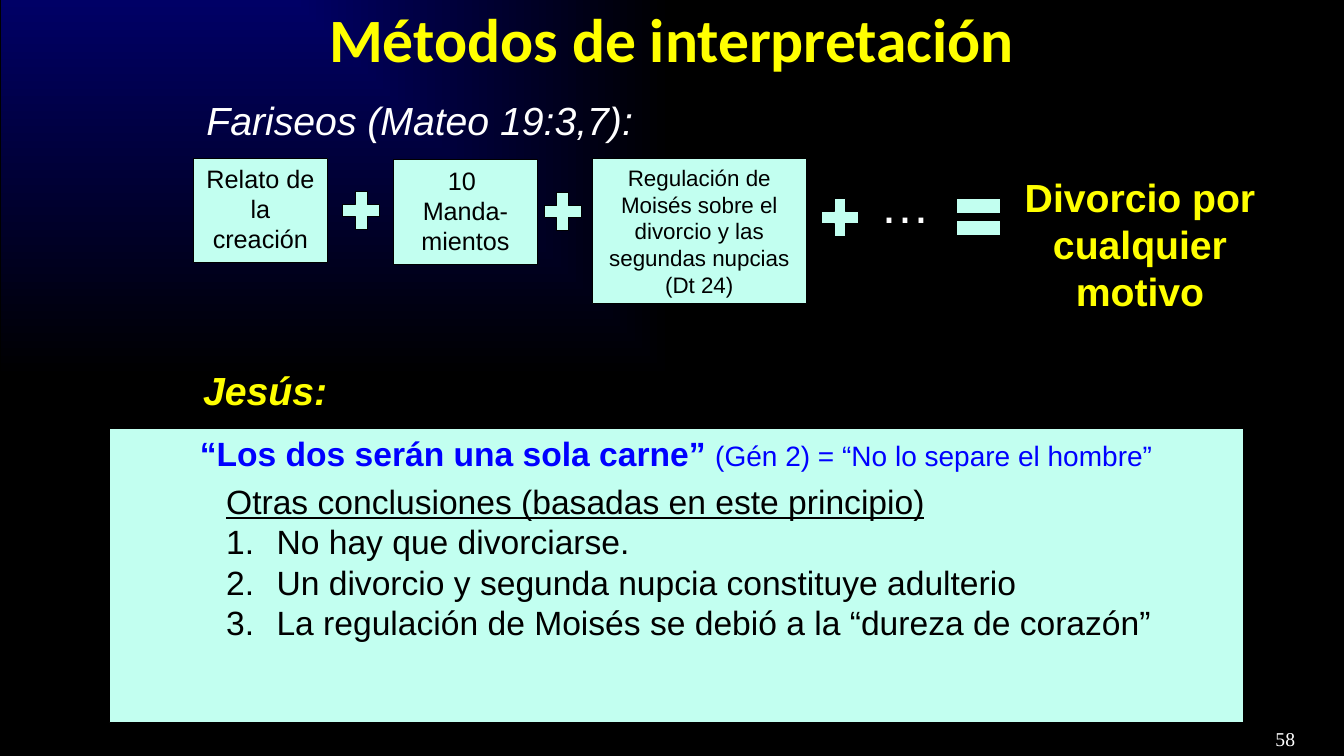
from lxml import etree
from pptx import Presentation
from pptx.dml.color import RGBColor
from pptx.enum.shapes import MSO_SHAPE
from pptx.enum.text import MSO_ANCHOR, PP_ALIGN
from pptx.oxml.ns import qn
from pptx.util import Pt

RECTANGLE = MSO_SHAPE.RECTANGLE
PLUS = MSO_SHAPE.MATH_PLUS
EQUAL = MSO_SHAPE.MATH_EQUAL
LEFT, CENTER = PP_ALIGN.LEFT, PP_ALIGN.CENTER
TOP, MIDDLE = MSO_ANCHOR.TOP, MSO_ANCHOR.MIDDLE

BLACK = RGBColor(0x00, 0x00, 0x00)
WHITE = RGBColor(0xFF, 0xFF, 0xFF)
NAVY = RGBColor(0x00, 0x00, 0x66)
BLUE = RGBColor(0x00, 0x00, 0xFF)
YELLOW = RGBColor(0xFF, 0xFF, 0x00)
MINT = RGBColor(0xC2, 0xFF, 0xF0)

PAGE_WIDTH, PAGE_HEIGHT = 960, 540


def add_span(para, text, color, size, name="Arial", **format_values):
    """Append text in one format; a newline becomes a line break."""
    for number, line in enumerate(text.split("\n")):
        if number:
            para.add_line_break()
        span = para.add_run()
        span.text = line
        span.font.color.rgb = color
        values = {"size": Pt(size), "name": name, **format_values}
        for key, value in values.items():
            setattr(span.font, key, value)


def add_label(page, place, text, color, size, align=LEFT, anchor=TOP,
              wrap=True, **format_values):
    box = page.shapes.add_textbox(*map(Pt, place))
    frame = box.text_frame
    frame.word_wrap = wrap
    frame.vertical_anchor = anchor
    para = frame.paragraphs[0]
    para.alignment = align
    add_span(para, text, color, size, **format_values)
    return frame


def add_block(page, kind, place, color=MINT):
    block = page.shapes.add_shape(kind, *map(Pt, place))
    block.shadow.inherit = False
    block.fill.solid()
    block.fill.fore_color.rgb = color
    block.line.color.rgb = BLACK
    block.line.width = Pt(0.75)
    block.text_frame.vertical_anchor = TOP
    block.text_frame.paragraphs[0].alignment = CENTER
    return block


def add_backdrop(page):
    """Rectangular gradient that spreads from the top left corner."""
    backdrop = add_block(page, RECTANGLE, (0, 0, PAGE_WIDTH, PAGE_HEIGHT))
    backdrop.fill.gradient()
    for stop, color in zip(backdrop.fill.gradient_stops, (NAVY, BLACK)):
        stop.color.rgb = color
    gradient = backdrop.element.spPr.find(qn("a:gradFill"))
    gradient.remove(gradient.find(qn("a:lin")))
    spread = etree.SubElement(gradient, qn("a:path"), path="rect")
    etree.SubElement(spread, qn("a:fillToRect"), r="100000", b="100000")


def add_numbered(frame, text):
    para = frame.add_paragraph()
    properties = para._p.get_or_add_pPr()
    properties.set("marL", str(Pt(36)))
    properties.set("indent", str(Pt(-36)))
    etree.SubElement(properties, qn("a:buFont"), typeface="+mj-lt")
    etree.SubElement(properties, qn("a:buAutoNum"), type="arabicPeriod")
    add_span(para, text, BLACK, 24)


def add_pharisees(page):
    add_label(page, (140.4, 65.5, 369.4, 41), "Fariseos (Mateo 19:3,7):",
              WHITE, 28, italic=True)
    # Texts that are added up
    terms = (
        ((138, 113, 96, 74.5), "Relato de la creación", 18),
        ((281, 114.2, 103, 74.5), "10 \nManda-mientos", 18),
        ((423, 113.5, 153, 103.5),
         "Regulación de Moisés sobre el divorcio y las segundas nupcias "
         "(Dt 24)", 16),
    )
    for place, text, size in terms:
        block = add_block(page, RECTANGLE, place)
        add_span(block.text_frame.paragraphs[0], text, BLACK, size)
    # Signs between the terms
    for left, top in ((240, 132), (384, 133), (582, 137)):
        add_block(page, PLUS, (left, top, 36, 36.5))
    add_block(page, EQUAL, (678, 132.5, 42, 45))
    add_label(page, (621.4, 120, 51, 51), "…", WHITE, 36, wrap=False)
    # Result
    add_label(page, (720, 120, 188.6, 75), "Divorcio por cualquier motivo",
              YELLOW, 28, align=CENTER, bold=True)


def add_jesus(page):
    add_label(page, (138, 258, 215, 41), "Jesús:", YELLOW, 28,
              bold=True, italic=True)
    panel = add_block(page, RECTANGLE, (78, 306, 810, 210))
    para = panel.text_frame.paragraphs[0]
    add_span(para, "“Los dos serán una sola carne” ", BLUE, 24, bold=True)
    add_span(para, "(Gén 2) = “No lo separe el hombre”", BLUE, 20)
    # Conclusions
    frame = add_label(page, (154.5, 340, 690, 124),
                      "Otras conclusiones (basadas en este principio)",
                      BLACK, 24, underline=True)
    for text in ("No hay que divorciarse.",
                 "Un divorcio y segunda nupcia constituye adulterio",
                 "La regulación de Moisés se debió a la “dureza de corazón”"):
        add_numbered(frame, text)


def main():
    deck = Presentation()
    deck.slide_width, deck.slide_height = Pt(PAGE_WIDTH), Pt(PAGE_HEIGHT)
    page = deck.slides.add_slide(deck.slide_layouts[6])
    add_backdrop(page)
    add_label(page, (0, 0, PAGE_WIDTH, 54), "Métodos de interpretación",
              YELLOW, 44, align=CENTER, anchor=MIDDLE, name="Calibri",
              bold=True)
    add_pharisees(page)
    add_jesus(page)
    # Page number
    add_label(page, (904, 516, 56, 24), "58", WHITE, 14,
              name="Times New Roman")
    deck.save("out.pptx")


if __name__ == "__main__":
    main()
